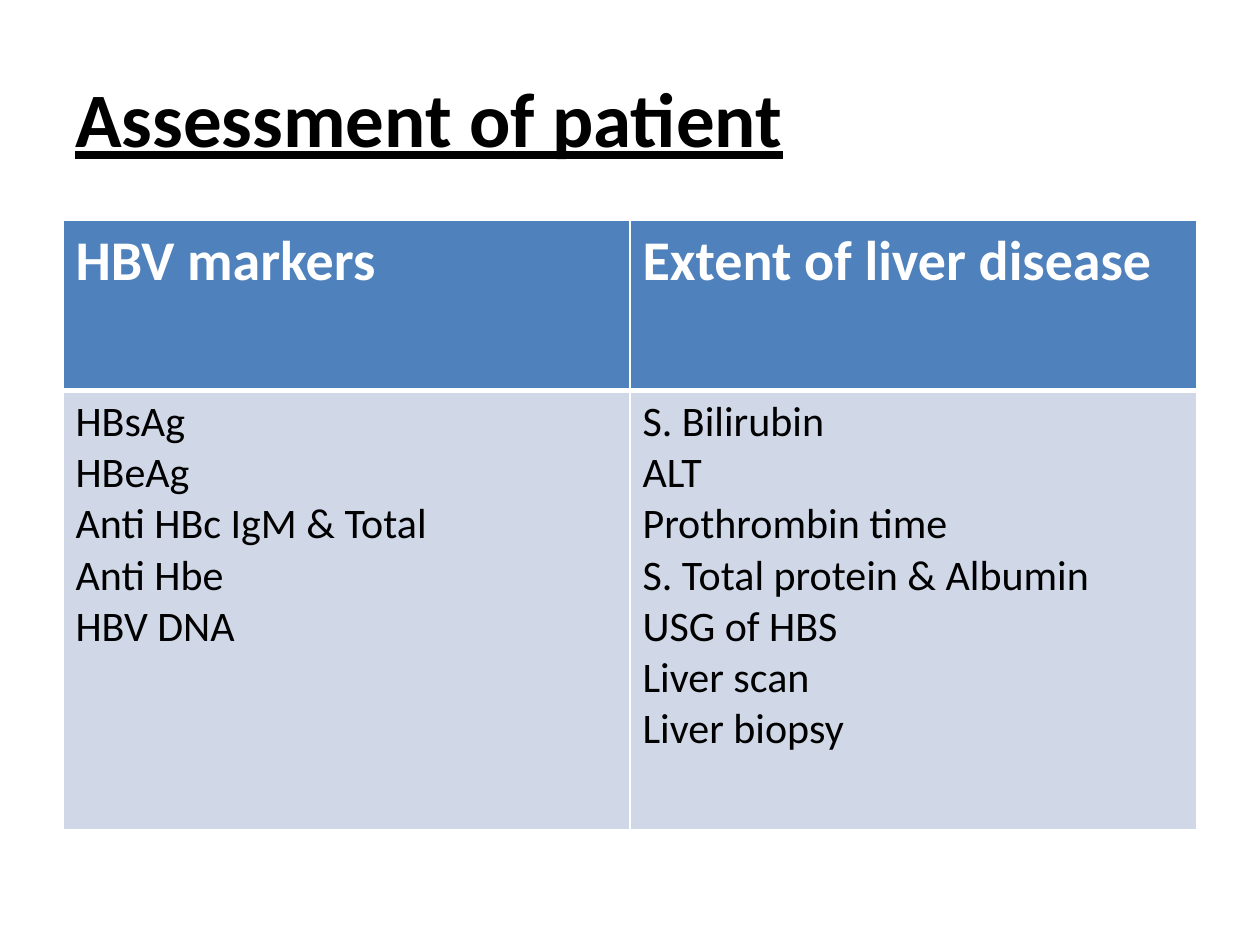
from dataclasses import dataclass

from lxml.etree import SubElement
from pptx import Presentation
from pptx.dml.color import RGBColor
from pptx.enum.text import MSO_ANCHOR as Anchor
from pptx.oxml.ns import qn
from pptx.slide import Slide
from pptx.table import _Cell as Cell
from pptx.text.text import TextFrame
from pptx.util import Pt

FONT = "Calibri"
BLACK = RGBColor(0x00, 0x00, 0x00)
WHITE = RGBColor(0xFF, 0xFF, 0xFF)
HEADER_BLUE = RGBColor(0x4F, 0x81, 0xBD)
BODY_BLUE = RGBColor(0xD0, 0xD8, 0xE8)

LEFT, WIDTH = 36, 648
HEADER_HEIGHT, BODY_HEIGHT = 97, 251
THIN, THICK = 1, 3


@dataclass
class TextStyle:
    size: float
    color: RGBColor
    bold: bool = False
    underline: bool = False


@dataclass
class Assessment:
    heading: str
    tests: list[str]


TITLE_STYLE = TextStyle(44, BLACK, bold=True, underline=True)
HEADER_STYLE = TextStyle(32, WHITE, bold=True)
BODY_STYLE = TextStyle(24, BLACK)

ASSESSMENTS = [
    Assessment("HBV markers", [
        "HBsAg", "HBeAg", "Anti HBc IgM & Total", "Anti Hbe", "HBV DNA",
    ]),
    Assessment("Extent of liver disease", [
        "S. Bilirubin", "ALT", "Prothrombin time", "S. Total protein & Albumin",
        "USG of HBS", "Liver scan", "Liver biopsy",
    ]),
]


def write_lines(frame: TextFrame, lines: list[str], style: TextStyle) -> None:
    for index, line in enumerate(lines):
        paragraph = frame.add_paragraph() if index else frame.paragraphs[0]
        run = paragraph.add_run()
        run.text = line
        run.font.name = FONT
        run.font.size = Pt(style.size)
        run.font.bold = style.bold
        run.font.underline = style.underline
        run.font.color.rgb = style.color


def set_borders(cell: Cell, top: float, bottom: float) -> None:
    properties = cell._tc.get_or_add_tcPr()
    widths = {"a:lnL": THIN, "a:lnR": THIN, "a:lnT": top, "a:lnB": bottom}
    for side, width in widths.items():
        line = SubElement(properties, qn(side), w=str(Pt(width)))
        fill = SubElement(line, qn("a:solidFill"))
        SubElement(fill, qn("a:srgbClr"), val=str(WHITE))


def fill_cell(cell: Cell, lines: list[str], style: TextStyle, color: RGBColor,
              top: float, bottom: float) -> None:
    set_borders(cell, top, bottom)
    cell.fill.solid()
    cell.fill.fore_color.rgb = color
    write_lines(cell.text_frame, lines, style)


def add_title(slide: Slide, text: str) -> None:
    title = slide.shapes.add_textbox(Pt(LEFT), Pt(21.6), Pt(WIDTH), Pt(90))
    title.text_frame.word_wrap = True
    title.text_frame.vertical_anchor = Anchor.MIDDLE
    write_lines(title.text_frame, [text], TITLE_STYLE)


def add_assessment_table(slide: Slide, assessments: list[Assessment]) -> None:
    table = slide.shapes.add_table(
        2, len(assessments), Pt(LEFT), Pt(126), Pt(WIDTH),
        Pt(HEADER_HEIGHT + BODY_HEIGHT)).table
    table.rows[0].height = Pt(HEADER_HEIGHT)
    table.rows[1].height = Pt(BODY_HEIGHT)
    for column, assessment in enumerate(assessments):
        table.columns[column].width = Pt(WIDTH / len(assessments))
        fill_cell(table.cell(0, column), [assessment.heading], HEADER_STYLE,
                  HEADER_BLUE, THIN, THICK)
        fill_cell(table.cell(1, column), assessment.tests, BODY_STYLE,
                  BODY_BLUE, THICK, THIN)


def main() -> None:
    deck = Presentation()
    deck.slide_width, deck.slide_height = Pt(720), Pt(540)
    slide = deck.slides.add_slide(deck.slide_layouts[6])

    # Title
    add_title(slide, "Assessment of patient")

    # Markers and liver tests, side by side
    add_assessment_table(slide, ASSESSMENTS)

    deck.save("out.pptx")


if __name__ == "__main__":
    main()
